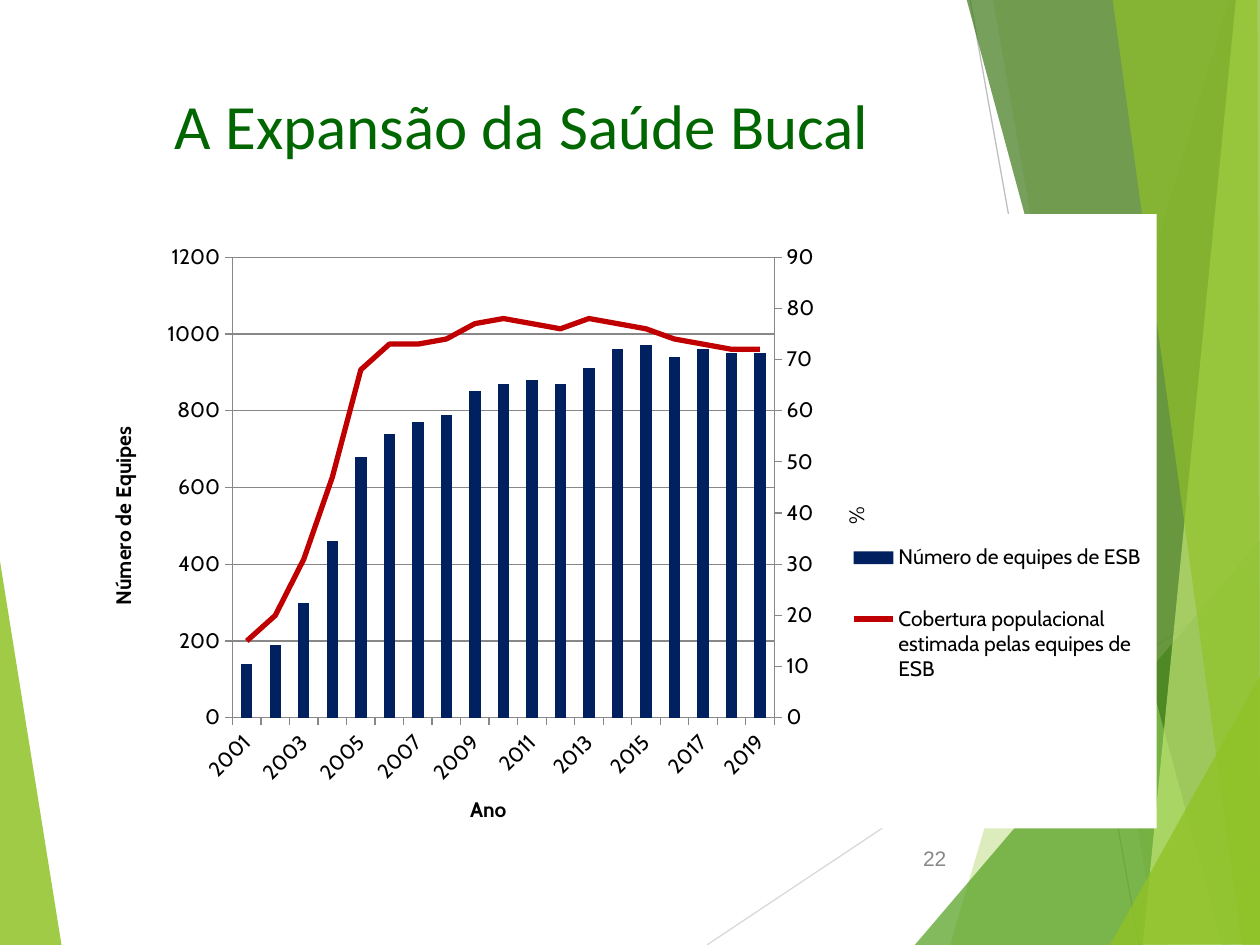
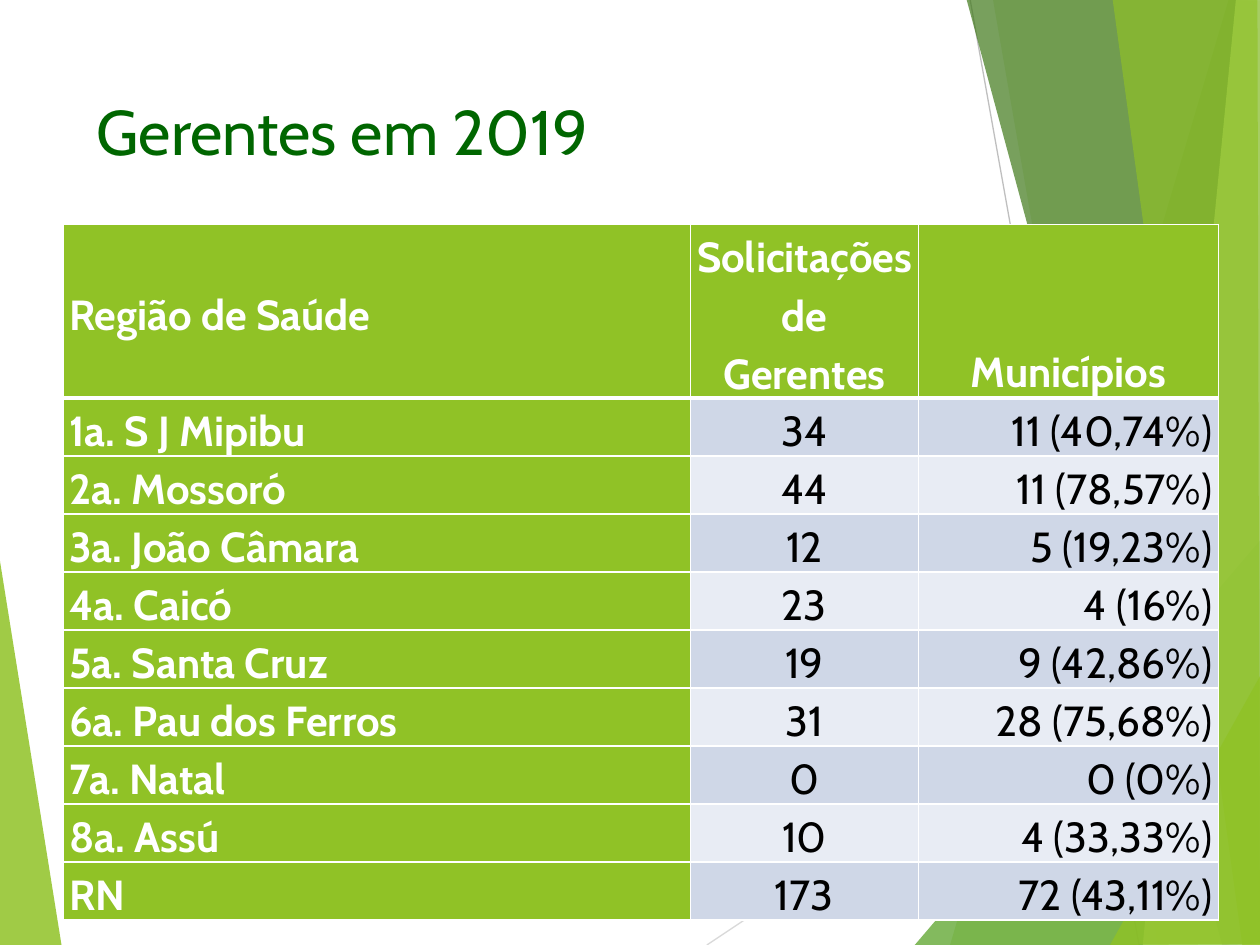
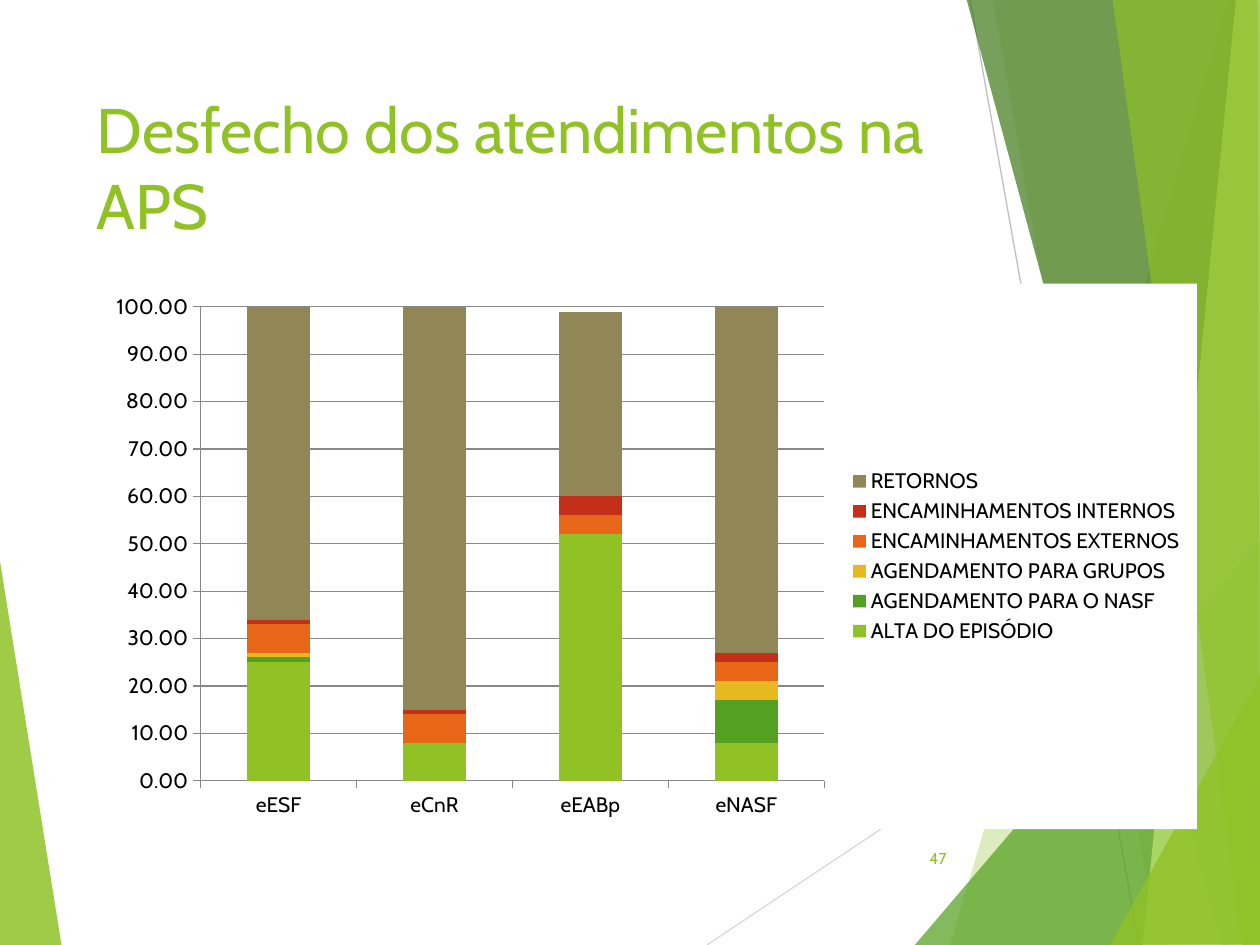
"""Build three slides on oral health teams, managers and care outcomes."""
from dataclasses import dataclass

from pptx import Presentation
from pptx.chart.axis import ValueAxis
from pptx.chart.data import CategoryChartData
from pptx.dml.color import RGBColor as RGB
from pptx.enum.chart import XL_CHART_TYPE as CT, XL_LEGEND_POSITION as LP
from pptx.enum.chart import XL_MARKER_STYLE as MS, XL_TICK_MARK as TM
from pptx.enum.shapes import MSO_CONNECTOR as MC
from pptx.enum.text import MSO_ANCHOR as VA, PP_ALIGN as PA
from pptx.oxml import parse_xml
from pptx.oxml.ns import nsdecls, qn
from pptx.util import Inches, Pt


@dataclass(frozen=True)
class Theme:
    """Colours, fonts and type sizes."""
    lime: str = "90C226"
    green: str = "54A021"
    forest: str = "3F7819"
    pale: str = "C0E474"
    title: str = "006600"
    navy: str = "002060"
    red: str = "C00000"
    gray: str = "888888"
    white: str = "FFFFFF"
    black: str = "000000"
    bands: tuple = ("CFD7E7", "E8ECF4")
    font: str = "Cabin"
    title_pt: int = 36
    table_pt: int = 24
    chart_pt: int = 12


T = Theme()

FACETS = [
    (T.lime, 85, [(-0.01, 4.39), (0.49, 7.51), (-0.01, 7.5)]),
    (T.lime, 30, [(9.75, 0), (7.54, 7.5), (10.02, 7.51), (10.01, 0.01)]),
    (T.lime, 20, [(7.88, -0.01), (9.19, 7.5), (10.01, 7.5), (10.01, -0.01)]),
    (T.green, 72, [(7.26, 7.5), (10, 4.29), (10.01, 7.5)]),
    (T.forest, 70, [(7.67, -0.01), (9.7, 7.5), (10.01, 7.49), (10.01, -0.01)]),
    (T.pale, 70, [(9.81, -0.01), (9.07, 7.5), (10.01, 7.5), (10, -0.01)]),
    (T.lime, 65, [(8.83, -0.01), (9.86, 7.5), (10, 7.5), (9.98, -0.01)]),
    (T.lime, 80, [(8.81, 7.5), (10.01, 5.35), (10.01, 7.49)]),
]
RAYS = [("D9D9D9", (5.61, 7.5, 10.01, 4.57)), ("BFBFBF", (7.7, 0, 9.04, 7.5))]

TEAMS = [140, 190, 300, 460, 680, 740, 770, 790, 850, 870,
         880, 870, 910, 960, 970, 940, 960, 950, 950]
COVERAGE = [15, 20, 31, 47, 68, 73, 73, 74, 77, 78,
            77, 76, 78, 77, 76, 74, 73, 72, 72]

MANAGERS = [
    ("Região de Saúde", "Solicitações de Gerentes", "Municípios"),
    ("1a. S J Mipibu", "34", "11 (40,74%)"),
    ("2a. Mossoró", "44", "11 (78,57%)"),
    ("3a. João Câmara", "12", "5 (19,23%)"),
    ("4a. Caicó", "23", "4 (16%)"),
    ("5a. Santa Cruz", "19", "9 (42,86%)"),
    ("6a. Pau dos Ferros", "31", "28 (75,68%)"),
    ("7a. Natal", "0", "0 (0%)"),
    ("8a. Assú", "10", "4 (33,33%)"),
    ("RN", "173", "72 (43,11%)"),
]

OUTCOMES = [
    ("ALTA DO EPISÓDIO", (25, 8, 52, 8), T.lime),
    ("AGENDAMENTO PARA O NASF", (1, 0, 0, 9), T.green),
    ("AGENDAMENTO PARA GRUPOS", (1, 0, 0, 4), "E6B91E"),
    ("ENCAMINHAMENTOS EXTERNOS", (6, 6, 4, 4), "E76618"),
    ("ENCAMINHAMENTOS INTERNOS", (1, 1, 4, 2), "C42F1A"),
    ("RETORNOS", (66, 85, 39, 74), "918655"),
]


def style_font(font, size, color, name=T.font, bold=False):
    """Set the face, size, colour and weight of a font."""
    font.name, font.size, font.bold = name, Pt(size), bold
    font.color.rgb = RGB.from_string(color)


def write(tf, text, size, color, name=T.font, bold=False, align=PA.LEFT):
    """Write one formatted paragraph and return it."""
    tf.text = text
    p = tf.paragraphs[0]
    p.alignment = align
    style_font(p.runs[0].font, size, color, name, bold)
    return p


def add_text(s, box, text, size, color, anchor=VA.MIDDLE, **style):
    """Add a wrapping text box."""
    tf = s.shapes.add_textbox(*map(Inches, box)).text_frame
    tf.word_wrap = True
    tf.vertical_anchor = anchor
    write(tf, text, size, color, **style)


def add_facet(s, color, alpha, points):
    """Add a translucent polygon."""
    start, *rest = [(Inches(x), Inches(y)) for x, y in points]
    builder = s.shapes.build_freeform(*start)
    builder.add_line_segments(rest)
    sp = builder.convert_to_shape()
    sp.shadow.inherit = False
    sp.line.fill.background()
    sp.fill.solid()
    sp.fill.fore_color.rgb = RGB.from_string(color)
    clr = sp._element.spPr.find(".//" + qn("a:srgbClr"))
    clr.append(parse_xml(f'<a:alpha {nsdecls("a")} val="{alpha * 1000}"/>'))


def add_ray(s, color, ends):
    """Add a thin straight line."""
    ln = s.shapes.add_connector(MC.STRAIGHT, *map(Inches, ends))
    ln.line.color.rgb = RGB.from_string(color)
    ln.line.width = Pt(0.75)
    ln._element.spPr.append(parse_xml(f'<a:effectLst {nsdecls("a")}/>'))


def add_slide(prs):
    """Add a blank slide with the faceted backdrop."""
    s = prs.slides.add_slide(prs.slide_layouts[6])
    add_facet(s, *FACETS[0])
    for ray in RAYS:
        add_ray(s, *ray)
    for facet in FACETS[1:]:
        add_facet(s, *facet)
    return s


def add_title(s, text, top, height, color=T.title, **style):
    """Add the slide title."""
    add_text(s, (0.67, top, 6.94, height), text, T.title_pt, color, **style)


def add_number(s, text, size, color, name=T.font):
    """Add the slide number."""
    add_text(s, (7.05, 6.61, 0.56, 0.4), text, size, color, name=name, align=PA.RIGHT)


def set_borders(cell, **widths):
    """Draw white borders, given by side as widths in points."""
    tcPr = cell._tc.get_or_add_tcPr()
    for side in "LRTB":
        tcPr.append(parse_xml(
            f'<a:ln{side} {nsdecls("a")} w="{Pt(widths.get(side, 1))}"><a:solidFill>'
            f'<a:srgbClr val="{T.white}"/></a:solidFill></a:ln{side}>'))


def add_table(s, box, rows, widths, heights):
    """Add a table with a filled header row and first column."""
    frame = s.shapes.add_table(len(rows), len(widths), *map(Inches, box))
    table = frame.table
    table.horz_banding = False
    for col, width in zip(table.columns, widths):
        col.width = Inches(width)
    for i, row in enumerate(rows):
        table.rows[i].height = Inches(heights[i])
        for j, text in enumerate(row):
            cell = table.cell(i, j)
            head = i == 0 or j == 0
            align = PA.LEFT if j == 0 else PA.CENTER if head or j == 1 else PA.RIGHT
            cell.margin_left = cell.margin_right = Inches(0.05)
            cell.margin_top = cell.margin_bottom = 0
            cell.vertical_anchor = VA.MIDDLE if i == j == 0 else VA.BOTTOM
            p = write(cell.text_frame, text, T.table_pt, T.white if head else T.black,
                      bold=head, align=align)
            p.line_spacing = 1.15
            set_borders(cell, B=3 if i == 0 else 1, T=3 if i == 1 else 1)
            cell.fill.solid()
            fill = T.lime if head else T.bands[(i - 1) % 2]
            cell.fill.fore_color.rgb = RGB.from_string(fill)
    frame.height = Inches(box[3])


def place(el, index, x, y, w=None, h=None):
    """Give a chart part a manual layout as fractions of the chart."""
    for old in el.findall(qn("c:layout")):
        el.remove(old)
    target = '<c:layoutTarget val="inner"/>' if index == 0 else ""
    size = f'<c:w val="{w}"/><c:h val="{h}"/>' if w else ""
    el.insert(index, parse_xml(
        f'<c:layout {nsdecls("c")}><c:manualLayout>{target}<c:xMode val="edge"/>'
        f'<c:yMode val="edge"/><c:x val="{x}"/><c:y val="{y}"/>{size}'
        f'</c:manualLayout></c:layout>'))


def style_line(line):
    """Make a chart rule thin and gray."""
    line.color.rgb = RGB.from_string(T.gray)
    line.width = Pt(0.75)


def style_axis(axis, top=None, step=None):
    """Set the line, ticks and scale of an axis."""
    style_line(axis.format.line)
    axis.major_tick_mark = TM.OUTSIDE
    if top:
        axis.minimum_scale, axis.maximum_scale, axis.major_unit = 0, top, step


def title_axis(axis, text, x, y, bold=True, rotate=False):
    """Title an axis at a fixed place."""
    tf = axis.axis_title.text_frame
    write(tf, text, T.chart_pt, T.black, bold=bold, align=None)
    if rotate:
        tf._txBody.bodyPr.set("rot", "-5400000")
        tf._txBody.bodyPr.set("vert", "horz")
    place(axis.axis_title._element, 1, x, y)


def add_column_chart(s, kind, box, cats, series, top, step):
    """Add a column chart on white with gridlines and a legend on the right."""
    data = CategoryChartData()
    data.categories = cats
    for name, vals, _ in series:
        data.add_series(name, vals)
    chart = s.shapes.add_chart(kind, *map(Inches, box), data).chart
    chart.has_title = False
    style_font(chart.font, T.chart_pt, T.black)
    chart._chartSpace.find(qn("c:chart")).addnext(parse_xml(
        f'<c:spPr {nsdecls("c", "a")}><a:solidFill><a:srgbClr val="{T.white}"/>'
        f'</a:solidFill><a:ln><a:noFill/></a:ln></c:spPr>'))
    chart.has_legend = True
    chart.legend.position = LP.RIGHT
    chart.legend.include_in_layout = False
    plot = chart.plots[0]
    plot.gap_width = 150
    plot.vary_by_categories = False
    for ser, (_, _, color) in zip(plot.series, series):
        ser.format.fill.solid()
        ser.format.fill.fore_color.rgb = RGB.from_string(color)
    style_axis(chart.category_axis)
    style_axis(chart.value_axis, top, step)
    chart.value_axis.has_major_gridlines = True
    style_line(chart.value_axis.major_gridlines.format.line)
    return chart


def move_to_right_axis(chart, color):
    """Turn the last column series into a line and return its right axis."""
    area = chart._chartSpace.find(".//" + qn("c:plotArea"))
    bar = area.find(qn("c:barChart"))
    ser = bar.findall(qn("c:ser"))[-1]
    for tag in ("c:invertIfNegative", "c:spPr"):
        for el in ser.findall(qn(tag)):
            ser.remove(el)
    ns = nsdecls("c")
    line = parse_xml(
        f'<c:lineChart {ns}><c:grouping val="standard"/><c:varyColors val="0"/>'
        f'<c:marker val="1"/><c:axId val="5001"/><c:axId val="5002"/></c:lineChart>')
    line.insert(2, ser)
    bar.addnext(line)
    cat_ax = parse_xml(
        f'<c:catAx {ns}><c:axId val="5001"/><c:scaling><c:orientation val="minMax"/>'
        f'</c:scaling><c:delete val="1"/><c:axPos val="b"/><c:crossAx val="5002"/>'
        f'<c:crosses val="autoZero"/></c:catAx>')
    val_ax = parse_xml(
        f'<c:valAx {ns}><c:axId val="5002"/><c:scaling><c:orientation val="minMax"/>'
        f'</c:scaling><c:delete val="0"/><c:axPos val="r"/>'
        f'<c:numFmt formatCode="General" sourceLinked="0"/><c:majorTickMark val="out"/>'
        f'<c:minorTickMark val="none"/><c:tickLblPos val="nextTo"/>'
        f'<c:crossAx val="5001"/><c:crosses val="max"/></c:valAx>')
    area.findall(qn("c:valAx"))[-1].addnext(cat_ax)
    cat_ax.addnext(val_ax)
    trend = chart.plots[1].series[0]
    trend.smooth = False
    trend.marker.style = MS.NONE
    trend.format.line.color.rgb = RGB.from_string(color)
    trend.format.line.width = Pt(3)
    return ValueAxis(val_ax)


def expansion_slide(prs):
    """Show team numbers and coverage by year."""
    s = add_slide(prs)
    add_title(s, "A Expansão da Saúde Bucal", 0.27, 1.44, name="Calibri", align=PA.CENTER)
    add_number(s, "22", 12, T.gray, "Arial")
    series = [("Número de equipes de ESB", TEAMS, T.navy),
              ("Cobertura populacional estimada pelas equipes de ESB", COVERAGE, T.red)]
    years = [str(year) for year in range(2001, 2020)]
    chart = add_column_chart(s, CT.COLUMN_CLUSTERED, (0.75, 1.7, 8.43, 4.88), years,
                             series, 1200, 200)
    title_axis(chart.category_axis, "Ano", 0.35, 0.94)
    title_axis(chart.value_axis, "Número de Equipes", 0.01, 0.34, rotate=True)
    right = move_to_right_axis(chart, T.red)
    style_axis(right, 90, 10)
    title_axis(right, "%", 0.7, 0.47, bold=False, rotate=True)
    style_font(chart.category_axis.tick_labels.font, T.chart_pt, T.black)
    cat_ax = chart.category_axis._element
    cat_ax.find(qn("c:txPr")).find(qn("a:bodyPr")).set("rot", "-2700000")
    cat_ax.find(qn("c:lblOffset")).addnext(
        parse_xml(f'<c:tickLblSkip {nsdecls("c")} val="2"/>'))
    area = chart._chartSpace.find(".//" + qn("c:plotArea"))
    place(area, 0, 0.13, 0.07, 0.51, 0.75)
    place(chart.legend._element, 1, 0.71, 0.48, 0.28, 0.34)


def managers_slide(prs):
    """Show the managers requested by health region."""
    s = add_slide(prs)
    add_title(s, "Gerentes em 2019", 0.67, 0.72)
    heights = [0.92] + [0.39] * (len(MANAGERS) - 1)
    add_table(s, (0.5, 1.78, 9.17, 4.81), MANAGERS, (4.98, 1.81, 2.38), heights)


def outcomes_slide(prs):
    """Show the outcome shares by kind of team."""
    s = add_slide(prs)
    add_title(s, "Desfecho dos atendimentos na APS", 0.67, 1.44, T.lime, anchor=VA.TOP)
    add_number(s, "47", 9, T.lime)
    chart = add_column_chart(s, CT.COLUMN_STACKED, (0.75, 2.25, 8.75, 4.33),
                             ("eESF", "eCnR", "eEABp", "eNASF"), OUTCOMES, 100, 10)
    chart.plots[0].overlap = 100
    labels = chart.value_axis.tick_labels
    labels.number_format, labels.number_format_is_linked = "0.00", False


def main():
    """Build and save the presentation."""
    prs = Presentation()
    prs.slide_width, prs.slide_height = Inches(10), Inches(7.5)
    expansion_slide(prs)
    managers_slide(prs)
    outcomes_slide(prs)
    prs.save("out.pptx")


if __name__ == "__main__":
    main()
